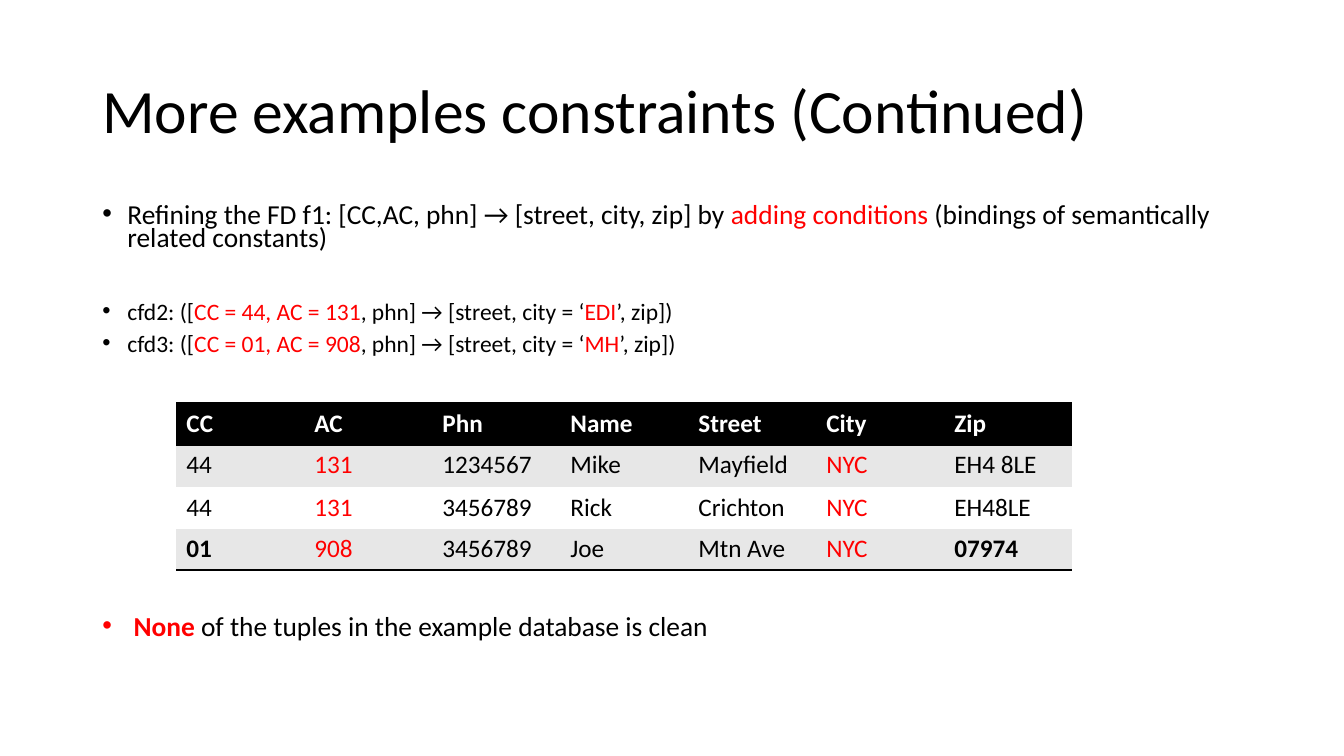
"""Build a slide on conditional constraints with bullets and an example table."""
import lxml.etree
import pptx
import pptx.dml.color
import pptx.enum.text
import pptx.oxml
import pptx.oxml.ns
import pptx.util

Pt = pptx.util.Pt
qn = pptx.oxml.ns.qn
COLORS = {"black": "000000", "red": "FF0000", "white": "FFFFFF", "band": "E7E7E7"}
NO_STYLE = "{2D5ABB26-0587-4C30-8999-92F81FD0307C}"


def add_span(para, text, size=18, color="black", bold=False):
    span = para.add_run()
    span.text = text
    span.font.name = "Calibri"
    span.font.size = Pt(size)
    span.font.bold = bold
    span.font.color.rgb = pptx.dml.color.RGBColor.from_string(COLORS[color])


def add_border(cell, side):
    properties = cell._tc.get_or_add_tcPr()
    border = pptx.oxml.parse_xml(
        f'<a:{side} xmlns:a="http://schemas.openxmlformats.org/drawingml/2006/main" w="{Pt(2)}">'
        f'<a:solidFill><a:srgbClr val="{COLORS["black"]}"/></a:solidFill></a:{side}>'
    )
    properties.insert(0, border)


deck = pptx.Presentation()
deck.slide_width = Pt(960)
deck.slide_height = Pt(540)
page = deck.slides.add_slide(deck.slide_layouts[6])

title = page.shapes.add_textbox(Pt(66), Pt(28.75), Pt(828), Pt(104.4)).text_frame
title.word_wrap = True
title.vertical_anchor = pptx.enum.text.MSO_ANCHOR.MIDDLE
title.paragraphs[0].line_spacing = 0.9
add_span(title.paragraphs[0], "More examples constraints (Continued)", size=44)

bullets = [
    (19.6, 0, [
        ("Refining the FD f1: [CC,AC, phn] → [street, city, zip] by ", "black", False),
        ("adding conditions ", "red", False),
        ("(bindings of semantically related constants)", "black", False),
    ]),
]
for name, condition, city, gap in [
    ("cfd2", "CC = 44, AC = 131", "EDI", 37),
    ("cfd3", "CC = 01, AC = 908", "MH", 9),
]:
    bullets.append((16.8, gap, [
        (f"{name}: ([", "black", False),
        (condition, "red", False),
        (", phn] → [street, city = ‘", "black", False),
        (city, "red", False),
        ("’, zip])", "black", False),
    ]))
bullets.append((19.6, 187, [
    (" None", "red", True),
    (" of the tuples in the example database is clean", "black", False),
]))

body = page.shapes.add_textbox(Pt(66), Pt(144), Pt(828), Pt(342.6)).text_frame
body.word_wrap = True
for index, (size, gap, spans) in enumerate(bullets):
    para = body.add_paragraph() if index else body.paragraphs[0]
    para.line_spacing = 0.7
    para.space_before = Pt(gap)
    properties = para._p.get_or_add_pPr()
    properties.set("marL", str(Pt(18)))
    properties.set("indent", str(Pt(-18)))
    lxml.etree.SubElement(properties, qn("a:buFont")).set("typeface", "Arial")
    lxml.etree.SubElement(properties, qn("a:buChar")).set("char", "•")
    for text, color, bold in spans:
        add_span(para, text, size=size, color=color, bold=bold)

rows = [
    ["CC", "AC", "Phn", "Name", "Street", "City", "Zip"],
    ["44", "131", "1234567", "Mike", "Mayfield", "NYC", "EH4 8LE"],
    ["44", "131", "3456789", "Rick", "Crichton", "NYC", "EH48LE"],
    ["01", "908", "3456789", "Joe", "Mtn Ave", "NYC", "07974"],
]
row_heights = [29.5, 30.6, 29.5, 29.5]
row_fills = ["black", "band", "white", "band"]
row_borders = [["lnB", "lnT"], [], [], ["lnB"]]
red_columns = ["AC", "City"]
bold_values = ["01", "07974"]

frame = page.shapes.add_table(
    len(rows), len(rows[0]), Pt(126), Pt(288), Pt(640.08), Pt(sum(row_heights))
)
table = frame.table
table._tbl.tblPr.find(qn("a:tableStyleId")).text = NO_STYLE
for column in table.columns:
    column.width = Pt(91.44)
for row_index, values in enumerate(rows):
    table.rows[row_index].height = Pt(row_heights[row_index])
    header = row_index == 0
    for column_index, value in enumerate(values):
        cell = table.cell(row_index, column_index)
        cell.fill.solid()
        cell.fill.fore_color.rgb = pptx.dml.color.RGBColor.from_string(
            COLORS[row_fills[row_index]]
        )
        for side in row_borders[row_index]:
            add_border(cell, side)
        plain = "red" if rows[0][column_index] in red_columns else "black"
        add_span(
            cell.text_frame.paragraphs[0],
            value,
            color="white" if header else plain,
            bold=header or value in bold_values,
        )

deck.save("out.pptx")
